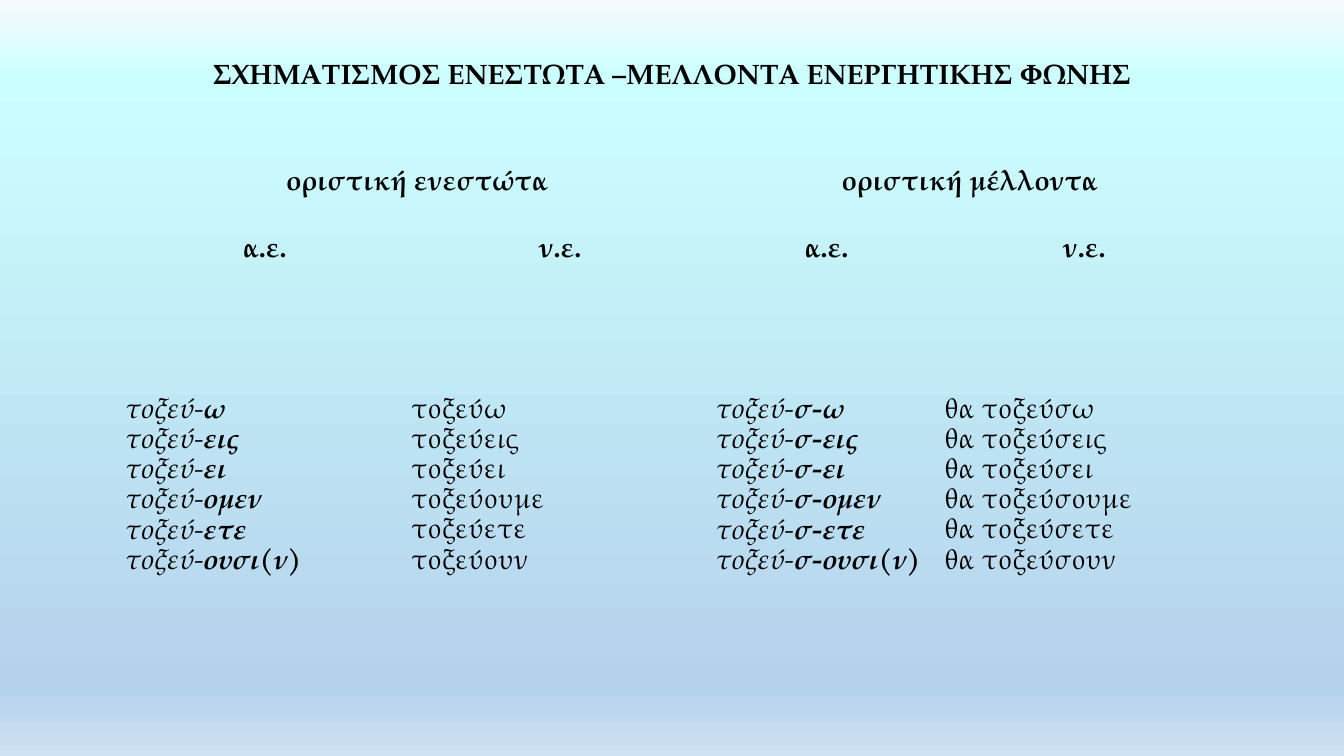
from copy import deepcopy
from dataclasses import dataclass

from pptx import Presentation
from pptx.dml.color import RGBColor
from pptx.enum.text import MSO_ANCHOR, PP_ALIGN
from pptx.oxml.ns import qn
from pptx.util import Cm, Pt

LEFT, CENTER = PP_ALIGN.LEFT, PP_ALIGN.CENTER
MIDDLE = MSO_ANCHOR.MIDDLE
FONT = "TeX Gyre Pagella"
PLAIN_TABLE = "{2D5ABB26-0587-4C30-8999-92F81FD0307C}"
BACKGROUND = [(0, "F7FAFD"), (0.1, "CCFFFF"), (0.91, "B5D2EC"), (1, "CEE1F2")]
TITLE = "ΣΧΗΜΑΤΙΣΜΟΣ ΕΝΕΣΤΩΤΑ –ΜΕΛΛΟΝΤΑ ΕΝΕΡΓΗΤΙΚΗΣ ΦΩΝΗΣ"
TENSES = ["οριστική ενεστώτα", "οριστική μέλλοντα"]
ROW_HEIGHTS = [1.7, 1.68, 10.24]
ANCIENT_ENDINGS = ["ω", "εις", "ει", "ομεν", "ετε", "ουσι(ν)"]
MODERN_ENDINGS = ["ω", "εις", "ει", "ουμε", "ετε", "ουν"]


@dataclass
class Column:
    width: float
    label: str
    stem: str
    endings: list[str]
    ancient: bool


COLUMNS = [
    Column(7.21, "α.ε.", "τοξεύ-", ANCIENT_ENDINGS, True),
    Column(7.67, "ν.ε.", "τοξεύ", MODERN_ENDINGS, False),
    Column(5.77, "α.ε.", "τοξεύ-", [f"σ-{e}" for e in ANCIENT_ENDINGS], True),
    Column(7.21, "ν.ε.", "θα τοξεύσ", MODERN_ENDINGS, False),
]


def rgb(value: str) -> RGBColor:
    return RGBColor.from_string(value)


def add_text(p, text: str, *, bold: bool = True, italic: bool = False,
             align=CENTER, spacing: float = 1.07) -> None:
    p.alignment = align
    p.line_spacing = spacing
    r = p.add_run()
    r.text = text
    r.font.name = FONT
    r.font.size = Pt(20)
    r.font.bold = bold
    r.font.italic = italic
    r.font.color.rgb = rgb("000000")


def paint_background(s) -> None:
    fill = s.background.fill
    fill.gradient()
    fill.gradient_angle = 270
    stops = s.element.find(".//" + qn("a:gsLst"))
    while len(stops) < len(BACKGROUND):
        stops.append(deepcopy(stops[0]))
    for stop, (position, color) in zip(fill.gradient_stops, BACKGROUND):
        stop.position = position
        stop.color.rgb = rgb(color)


def add_title(s) -> None:
    sp = s.shapes.add_textbox(Cm(2.34), Cm(1.02), Cm(29.21), Cm(1.78))
    tf = sp.text_frame
    tf.word_wrap = True
    tf.vertical_anchor = MIDDLE
    add_text(tf.paragraphs[0], TITLE, spacing=0.9)


def add_forms(p, column: Column) -> None:
    for i, ending in enumerate(column.endings):
        if i:
            p.add_line_break()
        if column.ancient:
            add_text(p, column.stem, bold=False, italic=True, align=LEFT)
            add_text(p, ending, italic=True, align=LEFT)
        else:
            add_text(p, column.stem + ending, bold=False, align=LEFT)


def add_verb_table(s) -> None:
    width = sum(c.width for c in COLUMNS)
    frame = s.shapes.add_table(len(ROW_HEIGHTS), len(COLUMNS), Cm(3.07), Cm(3.76),
                               Cm(width), Cm(sum(ROW_HEIGHTS)))
    table = frame.table
    table.first_row = table.horz_banding = False
    frame.element.find(".//" + qn("a:tableStyleId")).text = PLAIN_TABLE
    for row, height in zip(table.rows, ROW_HEIGHTS):
        row.height = Cm(height)
    for cell in table.iter_cells():
        cell.fill.background()
        cell.vertical_anchor = MIDDLE
        cell.margin_left = cell.margin_right = Cm(0.08)
        cell.margin_top = cell.margin_bottom = Cm(0.08)
    for i, tense in enumerate(TENSES):
        cell = table.cell(0, 2 * i)
        cell.merge(table.cell(0, 2 * i + 1))
        add_text(cell.text_frame.paragraphs[0], tense)
    for i, column in enumerate(COLUMNS):
        table.columns[i].width = Cm(column.width)
        add_text(table.cell(1, i).text_frame.paragraphs[0], column.label)
        add_forms(table.cell(2, i).text_frame.paragraphs[0], column)


def main() -> None:
    prs = Presentation()
    prs.slide_width, prs.slide_height = Cm(33.87), Cm(19.05)
    s = prs.slides.add_slide(prs.slide_layouts[6])
    paint_background(s)
    add_title(s)
    add_verb_table(s)
    prs.save("out.pptx")


if __name__ == "__main__":
    main()
